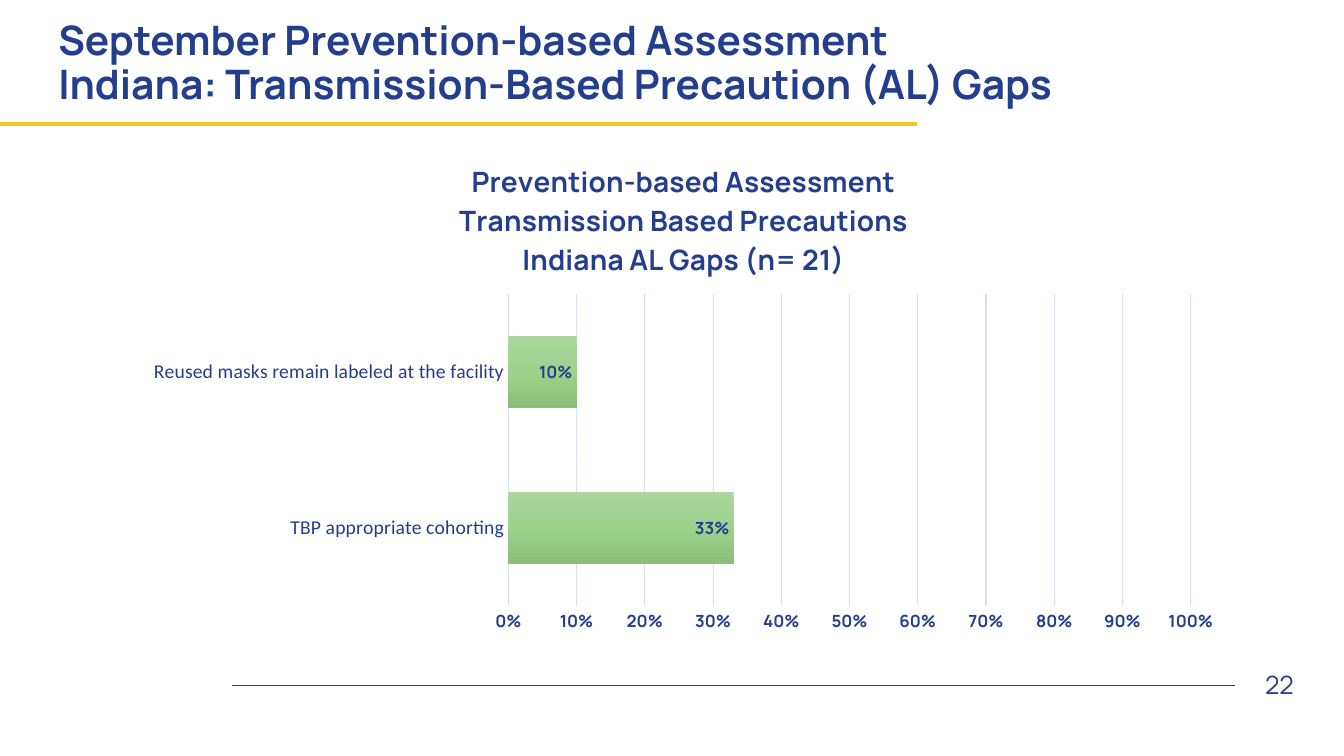
from pptx import Presentation
from pptx import util as u
from pptx.chart.data import CategoryChartData
from pptx.dml.color import RGBColor
from pptx.enum import chart as charts, shapes, text
from pptx.oxml import parse_xml
from pptx.oxml.ns import nsdecls, qn

COLORS = {
    "navy": "243E8E",
    "gold": "F7C327",
    "grid": "D7DFF5",
    "Series 1": ["74B35C", "5EAD38", "529F2D"],
    "Series 2": ["AAD59D", "9DD28D", "8ABE79"],
}


def color(name):
    return RGBColor.from_string(COLORS[name])


def layout_xml(target=None, **percents):
    """Return a manual chart layout; lengths are percentages of the chart."""
    parts = f'<c:layoutTarget val="{target}"/>' if target else ""
    parts += '<c:xMode val="edge"/><c:yMode val="edge"/>'
    parts += "".join(f'<c:{key} val="{percent / 100:.4f}"/>'
                     for key, percent in percents.items())
    return parse_xml(f'<c:layout {nsdecls("c")}><c:manualLayout>{parts}'
                     '</c:manualLayout></c:layout>')


class SlideBuilder:
    """Draws on one slide; positions are percentages of its width and height."""

    heading_font = "Manrope"
    label_font = "Calibri"

    def __init__(self, width, height):
        self.deck = Presentation()
        self.deck.slide_width = u.Inches(width)
        self.deck.slide_height = u.Inches(height)
        self.slide = self.deck.slides.add_slide(self.deck.slide_layouts[6])

    def across(self, percent):
        return round(self.deck.slide_width * percent / 100)

    def down(self, percent):
        return round(self.deck.slide_height * percent / 100)

    def box(self, left, top, width, height):
        return self.across(left), self.down(top), self.across(width), self.down(height)

    def style(self, font, size, bold=False, name=None):
        font.name = name or self.heading_font
        font.size = u.Pt(size)
        font.bold = bold
        font.color.rgb = color("navy")

    def rule(self, start, end, height, shade, weight):
        line = self.slide.shapes.add_connector(
            shapes.MSO_CONNECTOR.STRAIGHT, self.across(start), self.down(height),
            self.across(end), self.down(height))
        line.line.color.rgb = color(shade)
        line.line.width = u.Pt(weight)
        line._element.spPr.append(parse_xml(f'<a:effectLst {nsdecls("a")}/>'))

    def words(self, content, place, size, bold=False, align=text.PP_ALIGN.LEFT,
              spacing=1.0):
        frame = self.slide.shapes.add_textbox(*self.box(*place)).text_frame
        frame.word_wrap = True
        frame.vertical_anchor = text.MSO_ANCHOR.MIDDLE
        paragraph = frame.paragraphs[0]
        paragraph.text = content
        paragraph.alignment = align
        paragraph.line_spacing = spacing
        self.style(paragraph.font, size, bold)

    def bar_chart(self, heading, gaps, place):
        data = CategoryChartData(number_format="0%")
        data.categories = list(gaps)
        data.add_series("Series 1", [])
        data.add_series("Series 2", list(gaps.values()))
        chart = self.slide.shapes.add_chart(
            charts.XL_CHART_TYPE.BAR_CLUSTERED, *self.box(*place), data).chart
        chart.has_legend = False
        self.style(chart.font, 10, name="Arial")
        self.chart_heading(chart, heading)
        self.category_axis(chart.category_axis)
        self.percent_axis(chart.value_axis)
        self.bars(chart.plots[0])
        plot_area = chart._chartSpace.chart.plotArea
        for automatic in plot_area.findall(qn("c:layout")):
            plot_area.remove(automatic)
        plot_area.insert(0, layout_xml("inner", x=34.18, y=30.4, w=61.8, h=62))

    def chart_heading(self, chart, heading):
        chart.has_title = True
        title = chart.chart_title
        title.include_in_layout = False
        title.text_frame.text = heading
        for paragraph in title.text_frame.paragraphs:
            self.style(paragraph.font, 20, bold=True)
        element = title._element
        for automatic in element.findall(qn("c:layout")):
            element.remove(automatic)
        element.find(qn("c:tx")).addnext(layout_xml(x=29.45, y=3.2))

    def category_axis(self, axis):
        axis.major_tick_mark = charts.XL_TICK_MARK.NONE
        axis.format.line.color.rgb = color("grid")
        axis.format.line.width = u.Pt(1)
        self.style(axis.tick_labels.font, 14, name=self.label_font)

    def percent_axis(self, axis):
        axis.minimum_scale, axis.maximum_scale, axis.major_unit = 0, 1, 0.1
        axis.major_tick_mark = charts.XL_TICK_MARK.NONE
        axis.format.line.fill.background()
        axis.has_major_gridlines = True
        axis.major_gridlines.format.line.color.rgb = color("grid")
        axis.major_gridlines.format.line.width = u.Pt(0.75)
        axis.tick_labels.number_format = "0%"
        axis.tick_labels.number_format_is_linked = False
        self.style(axis.tick_labels.font, 12, bold=True)

    def bars(self, plot):
        plot.gap_width, plot.overlap = 115, -20
        plot.vary_by_categories = False
        for series in plot.series:
            stops = "".join(
                f'<a:gs pos="{index * 50000}"><a:srgbClr val="{shade}"/></a:gs>'
                for index, shade in enumerate(COLORS[series.name]))
            series._element.get_or_add_spPr().insert(0, parse_xml(
                f'<a:gradFill {nsdecls("a")} rotWithShape="1">'
                f'<a:gsLst>{stops}</a:gsLst>'
                '<a:lin ang="5400000" scaled="0"/></a:gradFill>'))
        empty, measured = plot.series
        empty._element.remove(empty._element.find(qn("c:val")))
        labels = measured.data_labels
        labels.show_value = True
        labels.position = charts.XL_LABEL_POSITION.INSIDE_END
        labels.number_format = "0%"
        labels.number_format_is_linked = False
        self.style(labels.font, 12, bold=True)


def main():
    page = SlideBuilder(13.33, 7.5)
    page.rule(17.25, 91.9, 90.67, "navy", 1)
    page.rule(0, 68.22, 16.4, "gold", 3)
    page.words("22", (91.9, 87.87, 5.1, 5.33), 18, align=text.PP_ALIGN.RIGHT)
    page.words("September Prevention-based Assessment\v"
               "Indiana: Transmission-Based Precaution (AL) Gaps",
               (3.6, 2.95, 89.57, 11.07), 29, bold=True, spacing=0.9)
    page.bar_chart(
        "Prevention-based Assessment\nTransmission Based Precautions\n"
        "Indiana AL Gaps (n= 21)",
        {"TBP appropriate cohorting": 0.33,
         "Reused masks remain labeled at the facility": 0.1},
        (9.75, 18.67, 82.15, 66.53))
    page.deck.save("out.pptx")


if __name__ == "__main__":
    main()
